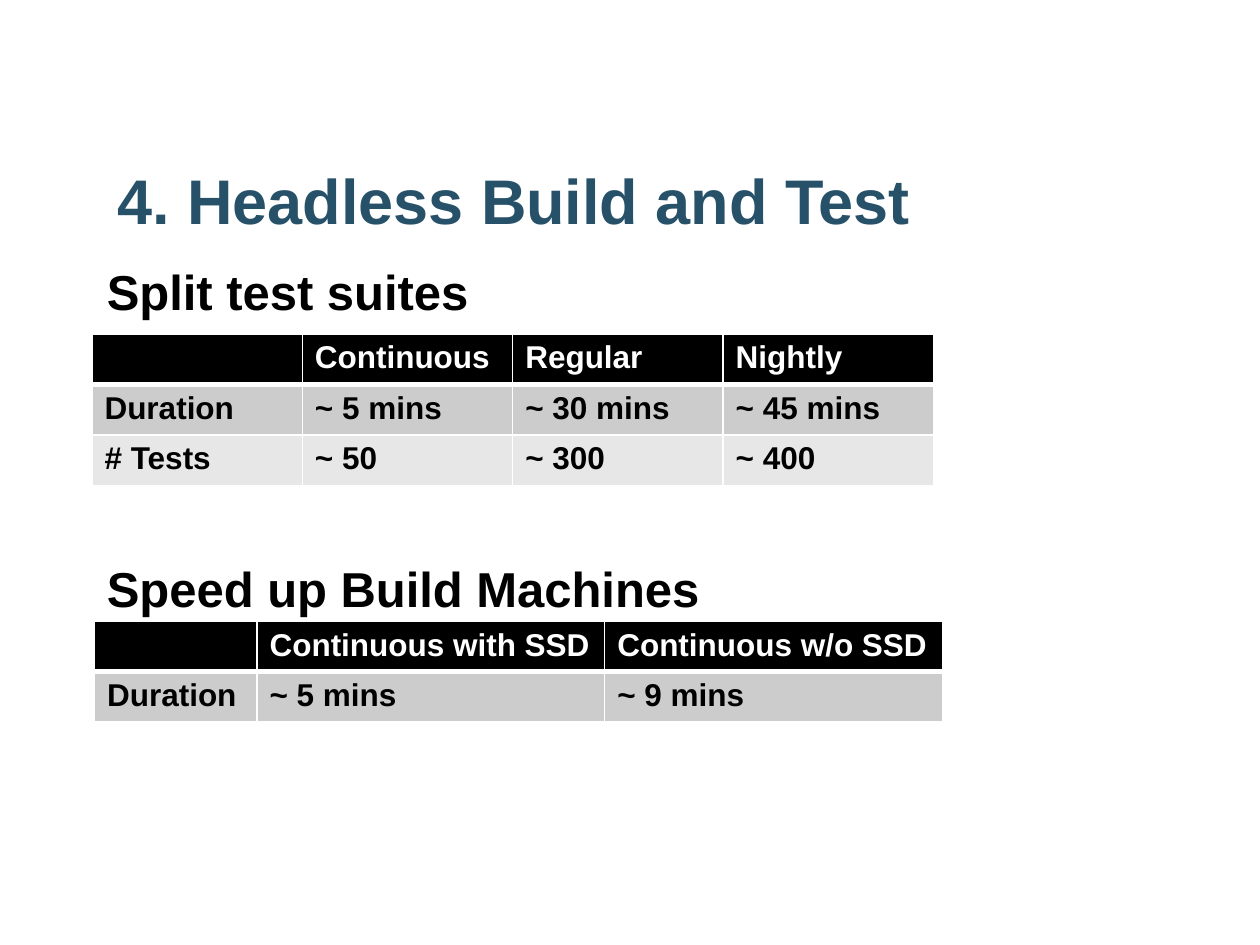
from lxml import etree
from pptx import Presentation
from pptx.dml.color import RGBColor
from pptx.enum.text import MSO_ANCHOR, PP_ALIGN
from pptx.oxml.ns import qn
from pptx.util import Inches, Pt

LEFT = PP_ALIGN.LEFT
TOP, BOTTOM = MSO_ANCHOR.TOP, MSO_ANCHOR.BOTTOM
TITLE_ONLY = 5

COLORS = {"title": "275169", "text": "000000", "header": "000000",
          "white": "FFFFFF", "band": "CCCCCC", "light": "E7E7E7"}
FONT = "Arial"
ROW_HEIGHT = 0.4
THIN, THICK = 1, 3

TITLE = "4. Headless Build and Test"
HEADINGS = ["Split test suites", "Speed up Build Machines"]
HEADING_GAP = 124
TABLES = [
    {"left": 0.73, "top": 2.65, "widths": [1.67] * 4,
     "rows": [["", "Continuous", "Regular", "Nightly"],
              ["Duration", "~ 5 mins", "~ 30 mins", "~ 45 mins"],
              ["# Tests", "~ 50", "~ 300", "~ 400"]]},
    {"left": 0.75, "top": 4.93, "widths": [1.29, 2.76, 2.68],
     "rows": [["", "Continuous with SSD", "Continuous w/o SSD"],
              ["Duration", "~ 5 mins", "~ 9 mins"]]},
]


def write(para, text, size=18, color="text", spacing=None, before=0, after=0):
    para.text = text
    para.alignment = LEFT
    para.line_spacing = spacing
    para.space_before = Pt(before)
    para.space_after = Pt(after)
    font = para.font
    font.name, font.size, font.bold = FONT, Pt(size), True
    font.color.rgb = RGBColor.from_string(COLORS[color])


def set_frame(box, anchor):
    frame = box.text_frame
    frame.word_wrap = True
    frame.vertical_anchor = anchor
    frame.margin_left = frame.margin_right = frame.margin_top = Inches(0.1)
    frame.margin_bottom = Inches(0.05)
    return frame


def set_borders(cell, top, bottom):
    """Draw white cell edges; top and bottom are widths in points."""
    properties = cell._tc.get_or_add_tcPr()
    edges = {"a:lnL": THIN, "a:lnR": THIN, "a:lnT": top, "a:lnB": bottom}
    for position, (tag, width) in enumerate(edges.items()):
        line = etree.Element(qn(tag), w=str(Pt(width)))
        fill = etree.SubElement(line, qn("a:solidFill"))
        etree.SubElement(fill, qn("a:srgbClr"), val=COLORS["white"])
        properties.insert(position, line)


def add_table(page, left, top, widths, rows):
    table = page.shapes.add_table(
        len(rows), len(widths), Inches(left), Inches(top),
        Inches(sum(widths)), Inches(ROW_HEIGHT * len(rows))).table
    for column, width in zip(table.columns, widths):
        column.width = Inches(width)
    fills = ["header", "band", "light"]
    for r, texts in enumerate(rows):
        table.rows[r].height = Inches(ROW_HEIGHT)
        for c, text in enumerate(texts):
            cell = table.cell(r, c)
            write(cell.text_frame.paragraphs[0], text,
                  color="white" if r == 0 else "text")
            cell.fill.solid()
            cell.fill.fore_color.rgb = RGBColor.from_string(COLORS[fills[r]])
            set_borders(cell, top=THICK if r == 1 else THIN,
                        bottom=THICK if r == 0 else THIN)


def main():
    deck = Presentation()
    deck.slide_width, deck.slide_height = Inches(10), Inches(7.5)
    page = deck.slides.add_slide(deck.slide_layouts[TITLE_ONLY])

    title = page.shapes.title
    title.left, title.top = Inches(0.83), Inches(1.23)
    title.width, title.height = Inches(8.59), Inches(0.71)
    write(set_frame(title, BOTTOM).paragraphs[0], TITLE,
          size=36, color="title", spacing=0.93)

    body = page.shapes.add_textbox(Inches(0.75), Inches(2.02),
                                   Inches(8.67), Inches(5.2))
    frame = set_frame(body, TOP)
    for index, heading in enumerate(HEADINGS):
        para = frame.add_paragraph() if index else frame.paragraphs[0]
        write(para, heading, size=28, spacing=0.93,
              before=HEADING_GAP if index else 0, after=14.2)

    for table in TABLES:
        add_table(page, **table)
    deck.save("out.pptx")


if __name__ == "__main__":
    main()
